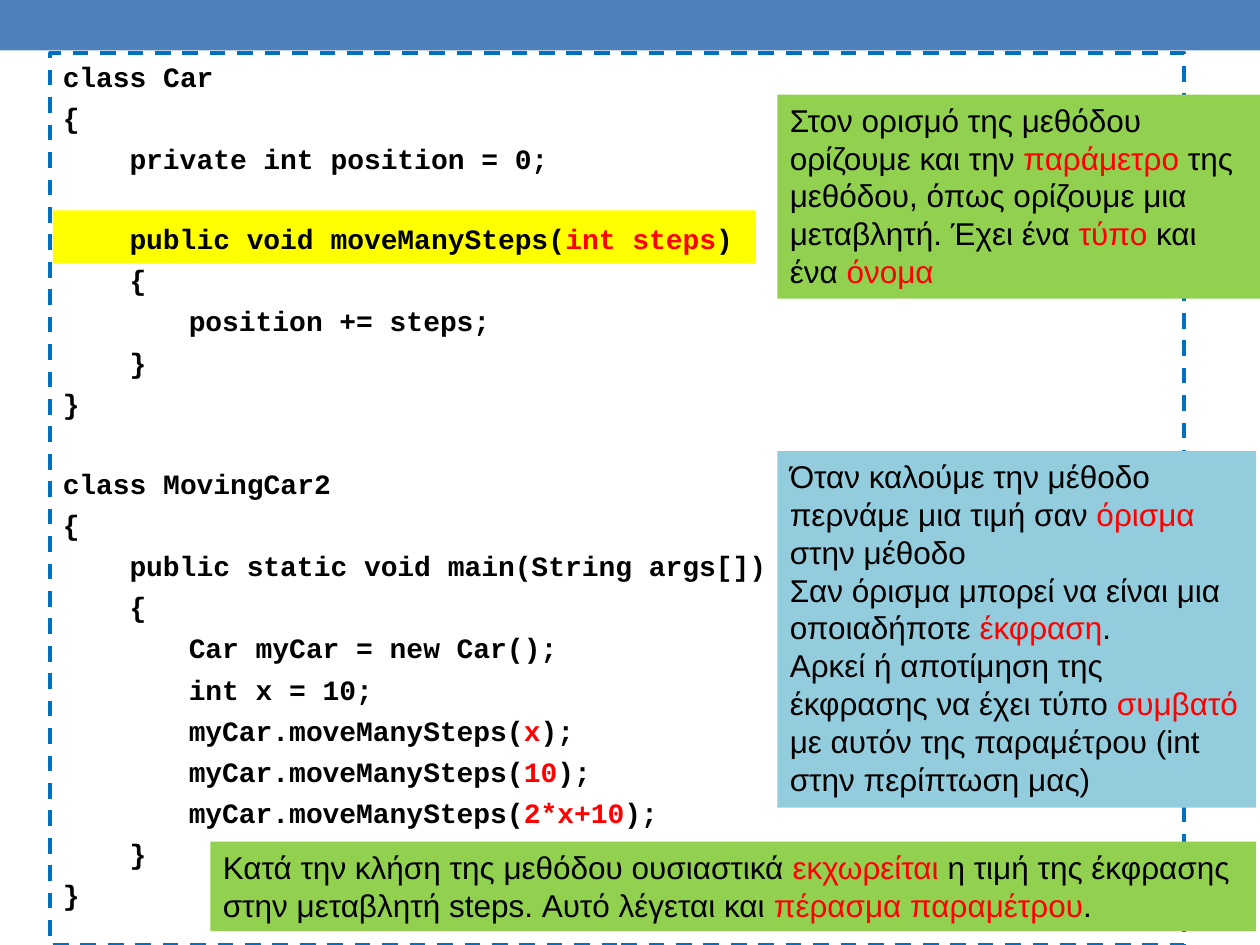
from dataclasses import dataclass

from pptx import Presentation
from pptx.dml.color import RGBColor
from pptx.enum.dml import MSO_LINE
from pptx.enum.shapes import MSO_SHAPE
from pptx.util import Inches, Pt

RECTANGLE = MSO_SHAPE.RECTANGLE
DASH = MSO_LINE.DASH
BLANK_LAYOUT = 6

BLACK, RED = "000000", "FF0000"
BLUE, YELLOW, GREEN, AQUA, FRAME_BLUE = "4F81BD", "FFFF00", "92D050", "93CDDD", "0070C0"

CODE_INDENTS = (0, 0.53, 1.0)  # inches, by nesting level
CODE_SPACING = 4.3  # points above each code line
CODE_LINE = 22.4  # points from one code line to the next


@dataclass
class CodeLine:
    text: str
    level: int = 0
    blank_above: bool = False


@dataclass
class Note:
    left: float
    top: float
    width: float
    height: float
    fill: str
    paragraphs: list[str]


# Text between bars is red
CODE = [
    CodeLine("class Car"),
    CodeLine("{"),
    CodeLine("private int position = 0;", 1),
    CodeLine("public void moveManySteps(|int steps|)", 1, blank_above=True),
    CodeLine("{", 1),
    CodeLine("position += steps;", 2),
    CodeLine("}", 1),
    CodeLine("}"),
    CodeLine("class MovingCar2", blank_above=True),
    CodeLine("{"),
    CodeLine("public static void main(String args[])", 1),
    CodeLine("{", 1),
    CodeLine("Car myCar = new Car();", 2),
    CodeLine("int x = 10;", 2),
    *(CodeLine(f"myCar.moveManySteps(|{argument}|);", 2) for argument in ("x", "10", "2*x+10")),
    CodeLine("}", 1),
    CodeLine("}"),
]

NOTES = [
    Note(6.17, 0.75, 3.83, 1.62, GREEN, [
        "Στον ορισμό της μεθόδου ορίζουμε και την |παράμετρο| της μεθόδου, "
        "όπως ορίζουμε μια μεταβλητή. Έχει ένα |τύπο| και ένα |όνομα|",
    ]),
    Note(6.17, 3.58, 3.8, 2.83, AQUA, [
        "Όταν καλούμε την μέθοδο περνάμε μια τιμή σαν |όρισμα| στην μέθοδο",
        "Σαν όρισμα μπορεί να είναι μια οποιαδήποτε |έκφραση|.",
        "Αρκεί ή αποτίμηση της έκφρασης να έχει τύπο |συμβατό| "
        "με αυτόν της παραμέτρου (int στην περίπτωση μας)",
    ]),
    Note(1.67, 6.68, 8.3, 0.71, GREEN, [
        "Κατά την κλήση της μεθόδου ουσιαστικά |εκχωρείται| η τιμή της έκφρασης "
        "στην μεταβλητή steps. Αυτό λέγεται και |πέρασμα παραμέτρου|.",
    ]),
]


def color(value: str) -> RGBColor:
    return RGBColor.from_string(value)


def add_band(page, left: float, top: float, width: float, height: float, fill: str) -> None:
    band = page.shapes.add_shape(RECTANGLE, Inches(left), Inches(top), Inches(width), Inches(height))
    band.shadow.inherit = False
    band.fill.solid()
    band.fill.fore_color.rgb = color(fill)
    band.line.fill.background()


def add_text_box(page, left: float, top: float, width: float, height: float):
    box = page.shapes.add_textbox(Inches(left), Inches(top), Inches(width), Inches(height))
    box.text_frame.word_wrap = True
    return box


def write(para, text: str, *, font: str, size: float, bold: bool = False) -> None:
    """Write the text, with the parts between bars in red."""
    for index, part in enumerate(text.split("|")):
        if not part:
            continue
        span = para.add_run()
        span.text = part
        span.font.name = font
        span.font.size = Pt(size)
        span.font.bold = bold
        span.font.color.rgb = color(RED if index % 2 else BLACK)


def next_paragraph(frame, index: int):
    return frame.add_paragraph() if index else frame.paragraphs[0]


def add_code(page, lines: list[CodeLine]) -> None:
    box = add_text_box(page, 0.4, 0.42, 9, 7.08)
    box.line.color.rgb = color(FRAME_BLUE)
    box.line.width = Pt(2.25)
    box.line.dash_style = DASH
    for index, line in enumerate(lines):
        para = next_paragraph(box.text_frame, index)
        para.space_before = Pt(CODE_SPACING + CODE_LINE * line.blank_above)
        indent = Inches(CODE_INDENTS[line.level])
        properties = para._p.get_or_add_pPr()
        properties.set("marL", str(indent))
        properties.set("indent", "0")
        write(para, line.text, font="Courier New", size=16, bold=True)


def add_note(page, note: Note) -> None:
    box = add_text_box(page, note.left, note.top, note.width, note.height)
    box.fill.solid()
    box.fill.fore_color.rgb = color(note.fill)
    for index, text in enumerate(note.paragraphs):
        write(next_paragraph(box.text_frame, index), text, font="Arial", size=18)


def main() -> None:
    deck = Presentation()
    deck.slide_width, deck.slide_height = Inches(10), Inches(7.5)
    page = deck.slides.add_slide(deck.slide_layouts[BLANK_LAYOUT])

    # Top banner and highlight behind the method header
    add_band(page, 0, 0, 10, 0.4, BLUE)
    add_band(page, 0.42, 1.67, 5.58, 0.42, YELLOW)

    # Code listing and the notes over it
    add_code(page, CODE)
    for note in NOTES:
        add_note(page, note)

    deck.save("out.pptx")


if __name__ == "__main__":
    main()
